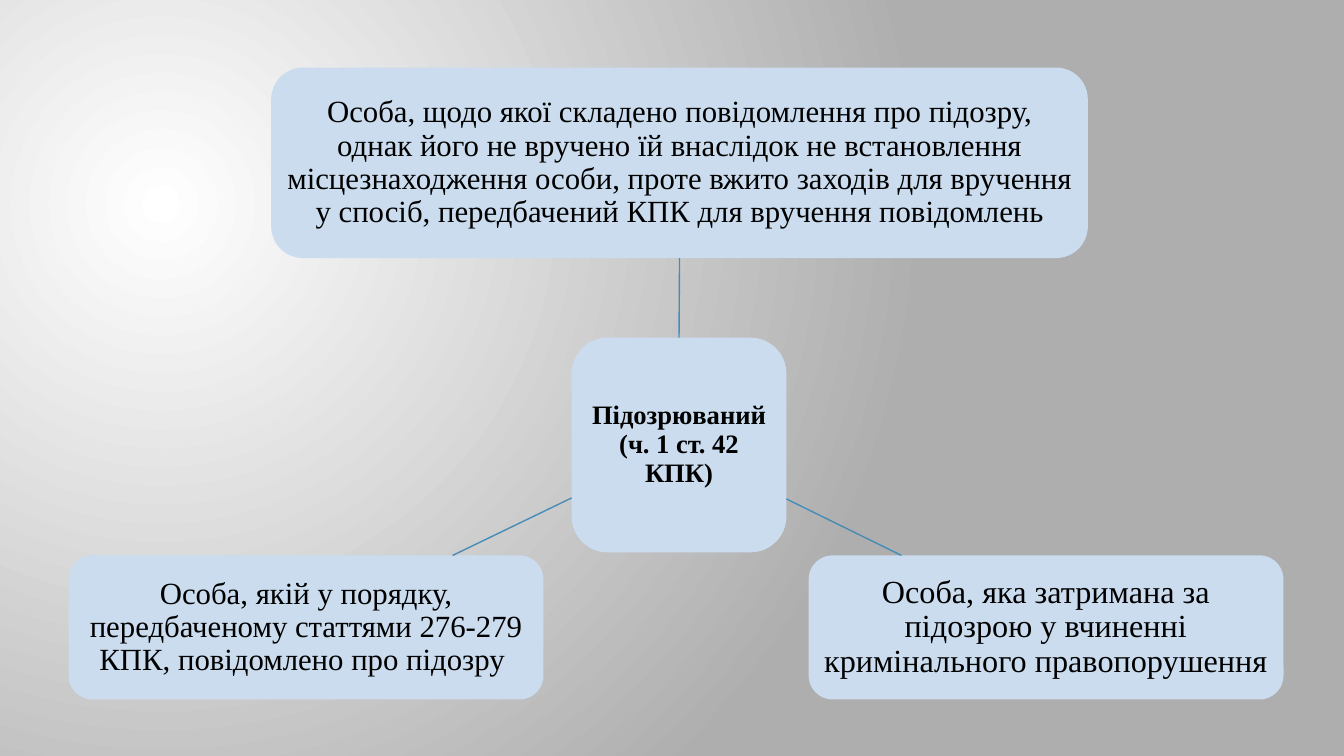
from dataclasses import dataclass

import lxml.etree
import pptx
import pptx.dml.color
import pptx.enum.dml
import pptx.enum.shapes
import pptx.enum.text
import pptx.oxml.ns
import pptx.shapes.autoshape
import pptx.shapes.connector
import pptx.slide
import pptx.util

Inches = pptx.util.Inches
Pt = pptx.util.Pt
qn = pptx.oxml.ns.qn

FONT = "Times New Roman"
BOX_FILL = "CADCEE"
LINE_COLOR = "478CB4"
TEXT_COLOR = "000000"
BACKGROUND_STOPS = ("FFFFFF", "AEAEAE")
BACKGROUND_FOCUS = {"l": "50000", "t": "55000", "r": "125000", "b": "100000"}


@dataclass(frozen=True)
class Box:
    left: float
    top: float
    width: float
    height: float
    text: str
    size: float
    inset: float = 0.06
    bold: bool = False


@dataclass(frozen=True)
class Link:
    x1: float
    y1: float
    x2: float
    y2: float


HUB = Box(5.67, 3.35, 2.13, 2.13, "Підозрюваний (ч. 1 ст. 42 КПК)", 19, 0.05, True)
UNSERVED = Box(
    2.69, 0.67, 8.1, 1.89,
    "Особа, щодо якої складено повідомлення про підозру, однак його не вручено їй "
    "внаслідок не встановлення місцезнаходження особи, проте вжито заходів для "
    "вручення у спосіб, передбачений КПК для вручення повідомлень", 22)
DETAINED = Box(
    8.02, 5.51, 4.71, 1.43,
    "Особа, яка затримана за підозрою у вчиненні кримінального правопорушення", 23)
NOTIFIED = Box(
    0.68, 5.51, 4.71, 1.43,
    "Особа, якій у порядку, передбаченому статтями 276-279 КПК, "
    "повідомлено про підозру ", 22)

TOP_LINK = Link(6.74, 3.35, 6.74, 2.56)
SIDE_LINKS = (Link(7.8, 4.95, 8.94, 5.51), Link(5.67, 4.94, 4.49, 5.51))


def rgb(value: str) -> pptx.dml.color.RGBColor:
    return pptx.dml.color.RGBColor.from_string(value)


def set_background(s: pptx.slide.Slide) -> None:
    """Fill the slide with a circular gradient around an off-centre focus."""
    fill = s.background.fill
    fill.gradient()
    for stop, color in zip(fill.gradient_stops, BACKGROUND_STOPS):
        stop.color.rgb = rgb(color)
    grad = next(s.element.iter(qn("a:gradFill")))
    circle = lxml.etree.Element(qn("a:path"), {"path": "circle"})
    lxml.etree.SubElement(circle, qn("a:fillToRect"), BACKGROUND_FOCUS)
    grad.replace(grad.find(qn("a:lin")), circle)


def add_box(s: pptx.slide.Slide, box: Box) -> pptx.shapes.autoshape.Shape:
    sp = s.shapes.add_shape(
        pptx.enum.shapes.MSO_SHAPE.ROUNDED_RECTANGLE,
        Inches(box.left), Inches(box.top), Inches(box.width), Inches(box.height))
    sp.shadow.inherit = False
    sp.fill.solid()
    sp.fill.fore_color.rgb = rgb(BOX_FILL)
    sp.line.fill.background()
    tf = sp.text_frame
    tf.word_wrap = True
    tf.vertical_anchor = pptx.enum.text.MSO_ANCHOR.MIDDLE
    tf.margin_left = tf.margin_right = Inches(box.inset)
    tf.margin_top = tf.margin_bottom = Inches(box.inset)
    p = tf.paragraphs[0]
    p.alignment = pptx.enum.text.PP_ALIGN.CENTER
    p.line_spacing = 0.9
    r = p.add_run()
    r.text = box.text
    r.font.name = FONT
    r.font.size = Pt(box.size)
    r.font.bold = box.bold
    r.font.color.rgb = rgb(TEXT_COLOR)
    return sp


def add_link(s: pptx.slide.Slide, link: Link) -> pptx.shapes.connector.Connector:
    cxn = s.shapes.add_connector(
        pptx.enum.shapes.MSO_CONNECTOR.STRAIGHT,
        Inches(link.x1), Inches(link.y1), Inches(link.x2), Inches(link.y2))
    cxn.line.color.rgb = rgb(LINE_COLOR)
    cxn.line.width = Pt(1)
    sp_pr = cxn.element.find(qn("p:spPr"))
    lxml.etree.SubElement(sp_pr, qn("a:effectLst"))
    return cxn


def main() -> None:
    prs = pptx.Presentation()
    prs.slide_width = Inches(13.33)
    prs.slide_height = Inches(7.5)
    s = prs.slides.add_slide(prs.slide_layouts[6])
    set_background(s)

    hub, unserved, _, _ = [add_box(s, b) for b in (HUB, UNSERVED, DETAINED, NOTIFIED)]
    top_link = add_link(s, TOP_LINK)
    top_link.begin_connect(hub, 0)
    top_link.end_connect(unserved, 2)
    for link in SIDE_LINKS:
        add_link(s, link)

    prs.save("out.pptx")


if __name__ == "__main__":
    main()
